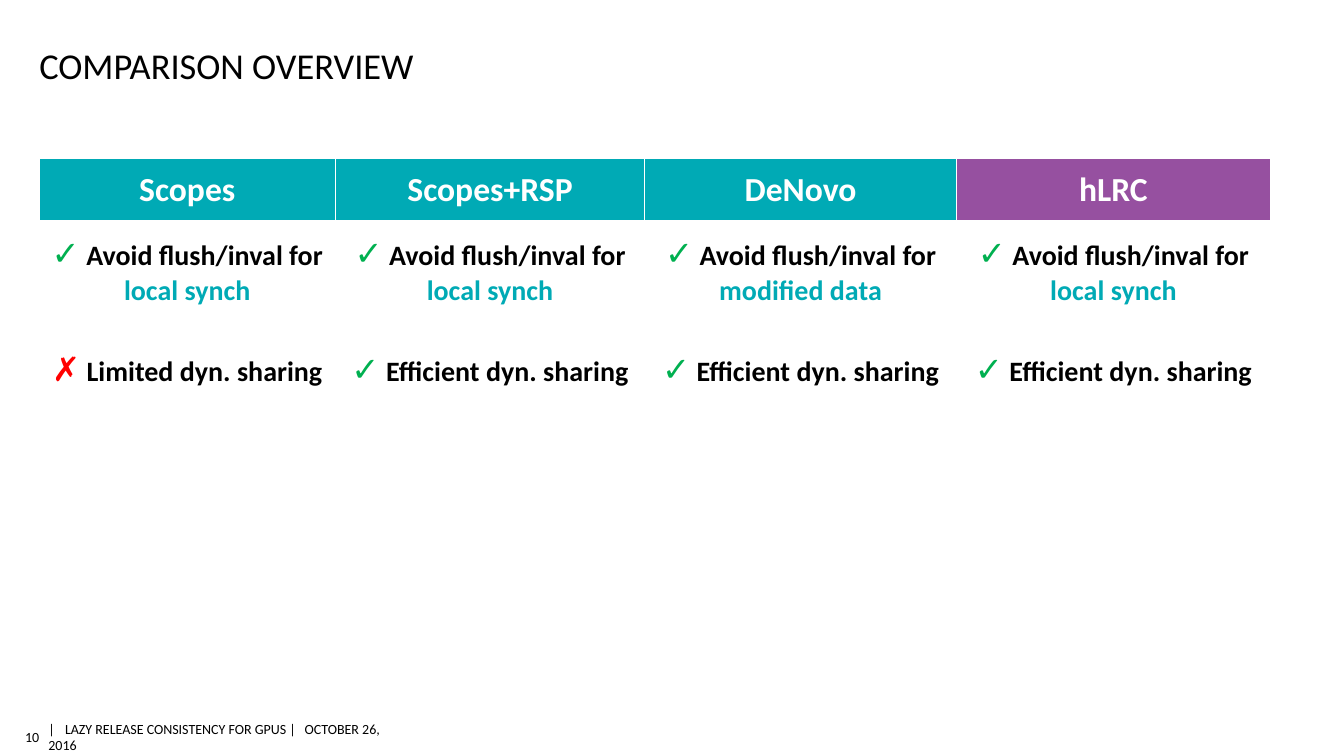
"""Builds the comparison overview slide with its four-scheme table."""
import pptx
import pptx.dml.color
import pptx.enum.text
import pptx.oxml
import pptx.util
from lxml import etree

Cm = pptx.util.Cm
ALIGN = pptx.enum.text.PP_ALIGN
ANCHOR = pptx.enum.text.MSO_ANCHOR

TEAL, PURPLE, GREEN, RED = "00AAB5", "9650A0", "00B050", "FF0000"
BLACK, WHITE = "000000", "FFFFFF"
MARK_COLOURS = {"✓": GREEN, "✗": RED}

TITLE = "COMPARISON OVERVIEW"
PAGE = "10"
FOOTER = "|\tLAZY RELEASE CONSISTENCY FOR GPUS |\tOCTOBER 26, 2016"
FOOTER_TABS = (0.42, 6.46)
AVOID = "Avoid flush/inval for"
SCHEMES = [
    ("Scopes", TEAL, 7.46, [("✓", AVOID, "local synch"), ("✗", "Limited dyn. sharing")]),
    ("Scopes+RSP", TEAL, 7.8, [("✓", AVOID, "local synch"), ("✓", "Efficient dyn. sharing")]),
    ("DeNovo", TEAL, 7.85, [("✓", AVOID, "modified data"), ("✓", "Efficient dyn. sharing")]),
    ("hLRC", PURPLE, 7.92, [("✓", AVOID, "local synch"), ("✓", "Efficient dyn. sharing")]),
]
ROW_HEIGHTS = (1.57, 2.51, 2.51)


def rgb(colour):
    return pptx.dml.color.RGBColor.from_string(colour)


def write(paragraph, text, size=20, colour=BLACK, bold=False, align=None):
    run = paragraph.add_run()
    run.text = text
    run.font.name = "Calibri"
    run.font.size = pptx.util.Pt(size)
    run.font.bold = bold
    run.font.color.rgb = rgb(colour)
    if align is not None:
        paragraph.alignment = align


def set_frame(frame, anchor, top, bottom):
    frame.word_wrap = True
    frame.vertical_anchor = anchor
    frame.margin_left = frame.margin_right = 0
    frame.margin_top, frame.margin_bottom = Cm(top), Cm(bottom)


def add_footer_part(slide, left, width, text, align, tabs=()):
    frame = slide.shapes.add_textbox(Cm(left), Cm(18.24), Cm(width), Cm(0.66)).text_frame
    set_frame(frame, ANCHOR.MIDDLE, 0.1, 0.1)
    paragraph = frame.paragraphs[0]
    if tabs:
        tab_list = etree.SubElement(paragraph._p.get_or_add_pPr(), pptx.oxml.ns.qn("a:tabLst"))
        for position in tabs:
            etree.SubElement(tab_list, pptx.oxml.ns.qn("a:tab"), pos=str(Cm(position)), algn="l")
    write(paragraph, text, size=10, align=align)


def underline_cell(cell, colour):
    cell._tc.get_or_add_tcPr().insert(0, pptx.oxml.parse_xml(
        f'<a:lnB {pptx.oxml.ns.nsdecls("a")} w="12700"><a:solidFill>'
        f'<a:srgbClr val="{colour}"/></a:solidFill></a:lnB>'))


def fill_scheme(table, column, name, colour, points):
    header = table.cell(0, column)
    header.fill.solid()
    header.fill.fore_color.rgb = rgb(colour)
    underline_cell(header, WHITE)
    header.vertical_anchor = ANCHOR.MIDDLE
    write(header.text_frame.paragraphs[0], name, size=24, colour=WHITE, bold=True, align=ALIGN.CENTER)
    for row, (mark, claim, *target) in enumerate(points, 1):
        cell = table.cell(row, column)
        cell.fill.background()
        cell.vertical_anchor = ANCHOR.MIDDLE
        first = cell.text_frame.paragraphs[0]
        write(first, mark, size=24, colour=MARK_COLOURS[mark], bold=True, align=ALIGN.CENTER)
        write(first, " " + claim, bold=True)
        for line in target:
            write(cell.text_frame.add_paragraph(), line, colour=TEAL, bold=True, align=ALIGN.CENTER)


def main():
    deck = pptx.Presentation()
    deck.slide_width, deck.slide_height = Cm(33.87), Cm(19.05)
    slide = deck.slides.add_slide(deck.slide_layouts[5])

    title = slide.shapes.title
    title.left, title.top, title.width, title.height = Cm(0.99), Cm(0.86), Cm(28.45), Cm(1.32)
    set_frame(title.text_frame, ANCHOR.BOTTOM, 0.13, 0)
    write(title.text_frame.paragraphs[0], TITLE, size=26, align=ALIGN.LEFT)

    widths = [scheme[2] for scheme in SCHEMES]
    table = slide.shapes.add_table(
        len(ROW_HEIGHTS), len(SCHEMES), Cm(0.99), Cm(4), Cm(sum(widths)), Cm(sum(ROW_HEIGHTS))).table
    table.horz_banding = False
    for row, height in zip(table.rows, ROW_HEIGHTS):
        row.height = Cm(height)
    for column, (name, colour, width, points) in enumerate(SCHEMES):
        table.columns[column].width = Cm(width)
        fill_scheme(table, column, name, colour, points)

    add_footer_part(slide, 0.56, 0.43, PAGE, ALIGN.RIGHT)
    add_footer_part(slide, 1.22, 8.79, FOOTER, ALIGN.LEFT, FOOTER_TABS)
    deck.save("out.pptx")


if __name__ == "__main__":
    main()
